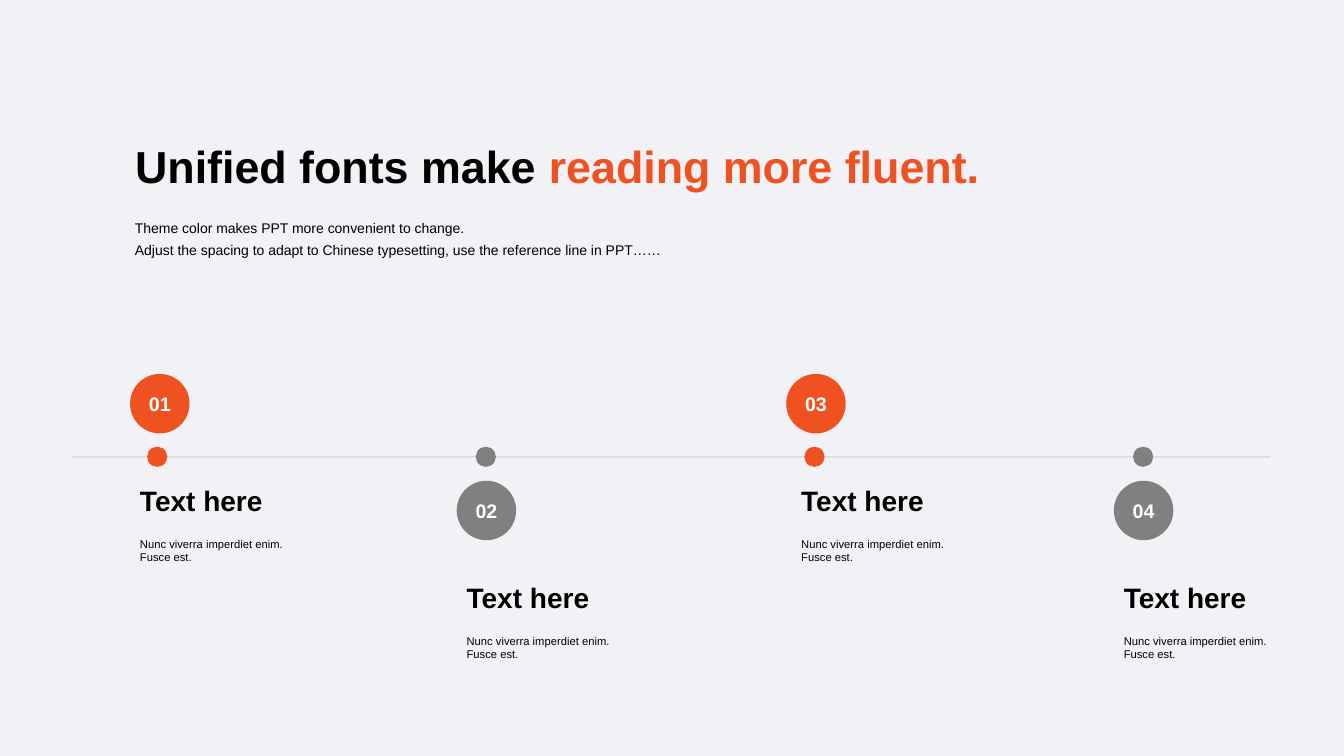
from lxml import etree
from pptx import Presentation
from pptx.dml.color import RGBColor
from pptx.enum.shapes import MSO_CONNECTOR, MSO_SHAPE
from pptx.enum.text import MSO_ANCHOR, MSO_AUTO_SIZE, PP_ALIGN
from pptx.oxml.ns import qn
from pptx.util import Pt

OVAL = MSO_SHAPE.OVAL
LINE = MSO_CONNECTOR.STRAIGHT
TOP, MID, LOW = MSO_ANCHOR.TOP, MSO_ANCHOR.MIDDLE, MSO_ANCHOR.BOTTOM
LEFT, MIDST = PP_ALIGN.LEFT, PP_ALIGN.CENTER
FIXED = MSO_AUTO_SIZE.NONE

FONT = "Arial"
HUES = {"back": "F2F1F5", "main": "EF5121", "gray": "808080",
        "ink": "000000", "white": "FFFFFF"}

AXIS = 326.3
DOT, DOT_X, DOT_GAP = 14.4, 105.1, 234.75
DISC = 42.5
BOX_W, BOX_H, BODY_GAP = 121.7, 31.7, 38.9
HIGH = {"hue": "main", "disc": 267.1, "head": 341.3}
DEEP = {"hue": "gray", "disc": 343.4, "head": 410.4}
STEPS = [
    ("01", 92.9, 92.9, HIGH),
    ("02", 326.2, 326.2, DEEP),
    ("03", 561.6, 565.2, HIGH),
    ("04", 795.6, 795.6, DEEP),
]


def tint(name):
    return RGBColor.from_string(HUES[name])


def write(shape, lines, size=10, bold=False, hue="ink", align=LEFT,
          anchor=TOP, space=1.0, pad=(7.2, 3.6), wrap=True):
    frame = shape.text_frame
    frame.auto_size = FIXED
    frame.word_wrap = wrap
    frame.vertical_anchor = anchor
    frame.margin_left = frame.margin_right = Pt(pad[0])
    frame.margin_top = frame.margin_bottom = Pt(pad[1])
    for i, line in enumerate(lines):
        para = frame.add_paragraph() if i else frame.paragraphs[0]
        para.alignment = align
        para.line_spacing = space
        for part in [line] if isinstance(line, str) else line:
            words, shade = (part, hue) if isinstance(part, str) else part
            run = para.add_run()
            run.text = words
            run.font.name = FONT
            run.font.size = Pt(size)
            run.font.bold = bold
            run.font.color.rgb = tint(shade)


def add_text(slide, x, y, w, h, lines, **form):
    box = slide.shapes.add_textbox(Pt(x), Pt(y), Pt(w), Pt(h))
    write(box, lines, **form)


def add_disc(slide, x, y, size, hue):
    disc = slide.shapes.add_shape(OVAL, Pt(x), Pt(y), Pt(size), Pt(size))
    disc.shadow.inherit = False
    disc.fill.solid()
    disc.fill.fore_color.rgb = tint(hue)
    disc.line.fill.background()
    return disc


def add_axis(slide, x1, x2, y):
    axis = slide.shapes.add_connector(LINE, Pt(x1), Pt(y), Pt(x2), Pt(y))
    axis.line.width = Pt(1)
    axis.line.color.rgb = tint("gray")
    props = axis.element.spPr
    color = props.find(".//" + qn("a:srgbClr"))
    etree.SubElement(color, qn("a:alpha")).set("val", "20000")
    etree.SubElement(props, qn("a:effectLst"))


def add_title(slide, x, y, w, h, lines):
    title = slide.shapes.title
    title.left, title.top = Pt(x), Pt(y)
    title.width, title.height = Pt(w), Pt(h)
    write(title, lines, size=32, bold=True, anchor=LOW)


def add_step(slide, rank, label, disc_x, text_x, kind):
    disc = add_disc(slide, disc_x, kind["disc"], DISC, kind["hue"])
    write(disc, [label], size=14, bold=True, hue="white", align=MIDST,
          anchor=MID, pad=(0, 0), wrap=False)
    add_text(slide, text_x, kind["head"], BOX_W, BOX_H, ["Text here"],
             size=20, bold=True, anchor=LOW)
    add_text(slide, text_x, kind["head"] + BODY_GAP, BOX_W, BOX_H,
             ["Nunc viverra imperdiet enim. Fusce est."], size=8)
    add_disc(slide, DOT_X + rank * DOT_GAP, AXIS - DOT / 2, DOT, kind["hue"])


def main():
    deck = Presentation()
    deck.slide_width, deck.slide_height = Pt(960), Pt(540)
    slide = deck.slides.add_slide(deck.slide_layouts[5])
    slide.background.fill.solid()
    slide.background.fill.fore_color.rgb = tint("back")

    add_title(slide, 89.3, 89.3, 818, 51.8,
              [["Unified fonts make ", ("reading more fluent.", "main")]])
    add_text(slide, 89.3, 149.8, 818, 37.4, [
        "Theme color makes PPT more convenient to change.",
        "Adjust the spacing to adapt to Chinese typesetting, "
        "use the reference line in PPT……",
    ], space=1.3)
    add_axis(slide, 51.8, 907.2, AXIS)
    for rank, step in enumerate(STEPS):
        add_step(slide, rank, *step)

    deck.save("out.pptx")


if __name__ == "__main__":
    main()
